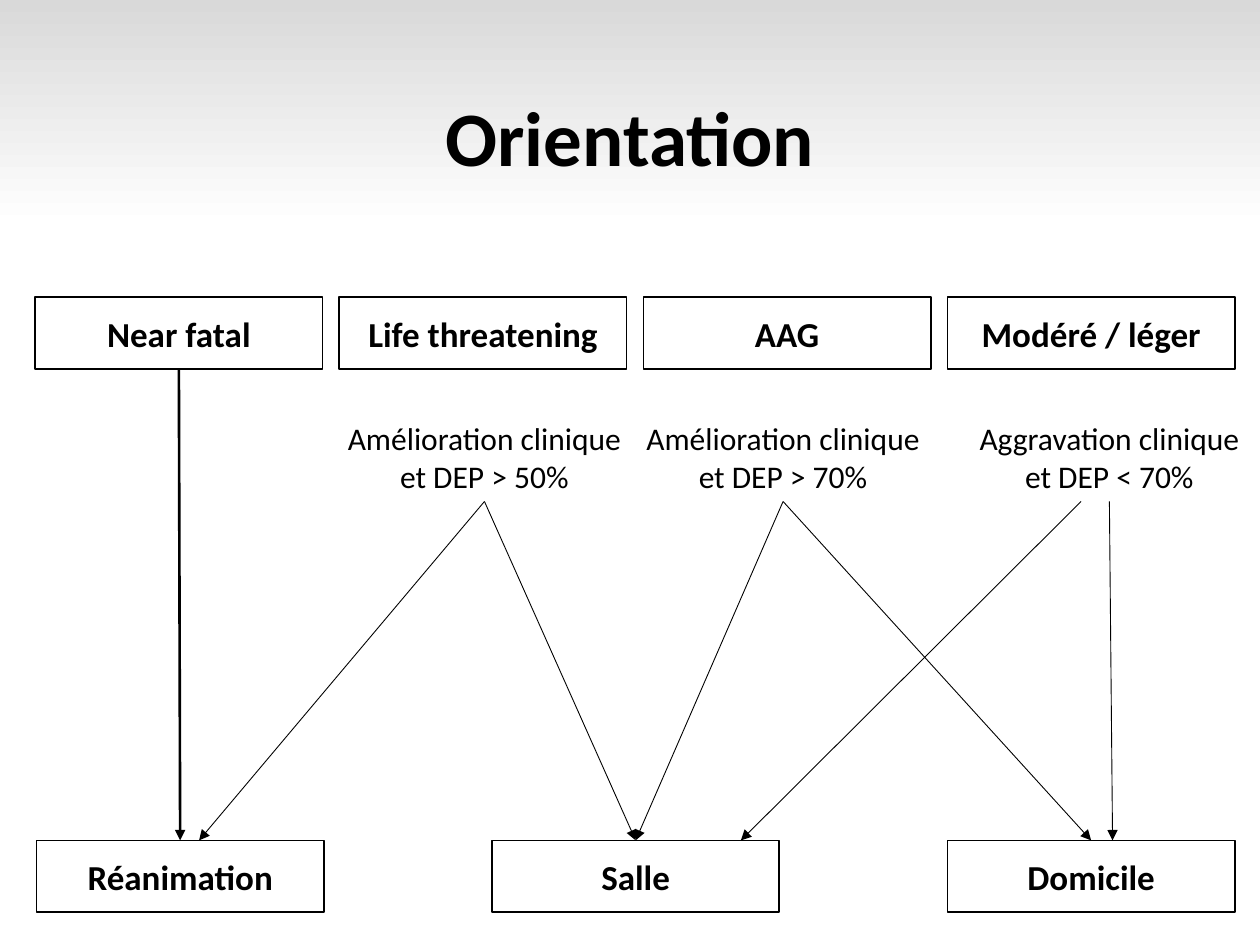
from dataclasses import dataclass

import lxml.etree
import pptx
import pptx.dml.color
import pptx.enum.shapes
import pptx.enum.text
import pptx.oxml.ns
import pptx.util
from pptx.util import Inches

FONT = "Calibri"
BLACK, WHITE, GREY = "000000", "FFFFFF", "D9D9D9"
BOX_WIDTH, BOX_HEIGHT = 2.28, 0.57
NOTE_WIDTH, NOTE_HEIGHT, NOTE_TOP = 2.41, 0.7, 3.28
SEVERITY_TOP, DESTINATION_TOP = 2.36, 6.67
TOP_SIDE, BOTTOM_SIDE = 0, 2


@dataclass
class Note:
    lines: tuple[str, str]
    left: float


@dataclass
class Arrow:
    """Runs from one shape to another; an x replaces the middle of a side."""
    source: str
    target: str
    source_x: float | None = None
    target_x: float | None = None
    width: float = 0.5


SEVERITIES = ["Near fatal", "Life threatening", "AAG", "Modéré / léger"]
DESTINATIONS = ["Réanimation", "Salle", "Domicile"]
NOTES = {
    "Life threatening": Note(("Amélioration clinique", "et DEP > 50%"), 2.64),
    "AAG": Note(("Amélioration clinique", "et DEP > 70%"), 5.01),
    "Modéré / léger": Note(("Aggravation clinique", "et DEP < 70%"), 7.6),
}
ARROWS = [
    Arrow("Near fatal", "Réanimation", width=1.5),
    Arrow("Life threatening", "Réanimation", target_x=1.58),
    Arrow("Life threatening", "Salle"),
    Arrow("AAG", "Salle"),
    Arrow("Modéré / léger", "Salle", source_x=8.58, target_x=5.88),
    Arrow("AAG", "Domicile"),
    Arrow("Modéré / léger", "Domicile", target_x=8.83),
]


def color(value: str) -> pptx.dml.color.RGBColor:
    return pptx.dml.color.RGBColor.from_string(value)


def write(text_frame, lines, size: float, bold: bool = False):
    """Fill the first paragraph, with a line break between lines."""
    paragraph = text_frame.paragraphs[0]
    paragraph.alignment = pptx.enum.text.PP_ALIGN.CENTER
    for index, line in enumerate(lines):
        if index:
            paragraph.add_line_break()
        run = paragraph.add_run()
        run.text = line
        run.font.name = FONT
        run.font.size = pptx.util.Pt(size)
        run.font.bold = bold
        run.font.color.rgb = color(BLACK)
    return paragraph


def set_background(slide) -> None:
    fill = slide.background.fill
    fill.gradient()
    fill.gradient_angle = 270
    for stop, value, position in zip(fill.gradient_stops, (GREY, WHITE), (0, 0.24)):
        stop.color.rgb = color(value)
        stop.position = position


def set_title(slide, text: str) -> None:
    title = slide.shapes.title
    title.left, title.top = Inches(0.69), Inches(0.4)
    title.width, title.height = Inches(8.62), Inches(1.45)
    title.text_frame.vertical_anchor = pptx.enum.text.MSO_ANCHOR.MIDDLE
    write(title.text_frame, [text], 44, bold=True).line_spacing = 0.9


def add_box(slide, text: str, left: float, top: float):
    shape = slide.shapes.add_shape(
        pptx.enum.shapes.MSO_SHAPE.RECTANGLE,
        Inches(left), Inches(top), Inches(BOX_WIDTH), Inches(BOX_HEIGHT))
    shape.shadow.inherit = False
    shape.fill.solid()
    shape.fill.fore_color.rgb = color(WHITE)
    shape.line.color.rgb = color(BLACK)
    shape.line.width = pptx.util.Pt(1)
    shape.text_frame.vertical_anchor = pptx.enum.text.MSO_ANCHOR.MIDDLE
    write(shape.text_frame, [text], 20, bold=True)
    return shape


def add_row(slide, names: list[str], first: float, last: float, top: float) -> dict:
    """Spread boxes evenly between the first and last left edges."""
    step = (last - first) / (len(names) - 1)
    return {name: add_box(slide, name, first + index * step, top)
            for index, name in enumerate(names)}


def add_note(slide, note: Note):
    shape = slide.shapes.add_textbox(
        Inches(note.left), Inches(NOTE_TOP), Inches(NOTE_WIDTH), Inches(NOTE_HEIGHT))
    shape.text_frame.word_wrap = True
    shape.text_frame.auto_size = pptx.enum.text.MSO_AUTO_SIZE.SHAPE_TO_FIT_TEXT
    write(shape.text_frame, note.lines, 18)
    return shape


def add_arrow(slide, arrow: Arrow, source, target) -> None:
    connector = slide.shapes.add_connector(
        pptx.enum.shapes.MSO_CONNECTOR.STRAIGHT,
        Inches(arrow.source_x or 0), source.top + source.height,
        Inches(arrow.target_x or 0), target.top)
    if arrow.source_x is None:
        connector.begin_connect(source, BOTTOM_SIDE)
    if arrow.target_x is None:
        connector.end_connect(target, TOP_SIDE)
    connector.line.color.rgb = color(BLACK)
    connector.line.width = pptx.util.Pt(arrow.width)
    qn = pptx.oxml.ns.qn
    properties = connector._element.spPr
    line = properties.find(qn("a:ln"))
    lxml.etree.SubElement(line, qn("a:tailEnd"), type="triangle")
    lxml.etree.SubElement(properties, qn("a:effectLst"))


def main() -> None:
    presentation = pptx.Presentation()
    presentation.slide_width = Inches(10)
    presentation.slide_height = Inches(7.5)
    slide = presentation.slides.add_slide(presentation.slide_layouts[5])
    set_background(slide)
    set_title(slide, "Orientation")

    severities = add_row(slide, SEVERITIES, 0.28, 7.52, SEVERITY_TOP)
    destinations = add_row(slide, DESTINATIONS, 0.29, 7.52, DESTINATION_TOP)
    notes = {name: add_note(slide, note) for name, note in NOTES.items()}
    sources = severities | notes
    for arrow in ARROWS:
        add_arrow(slide, arrow, sources[arrow.source], destinations[arrow.target])
    presentation.save("out.pptx")


if __name__ == "__main__":
    main()
